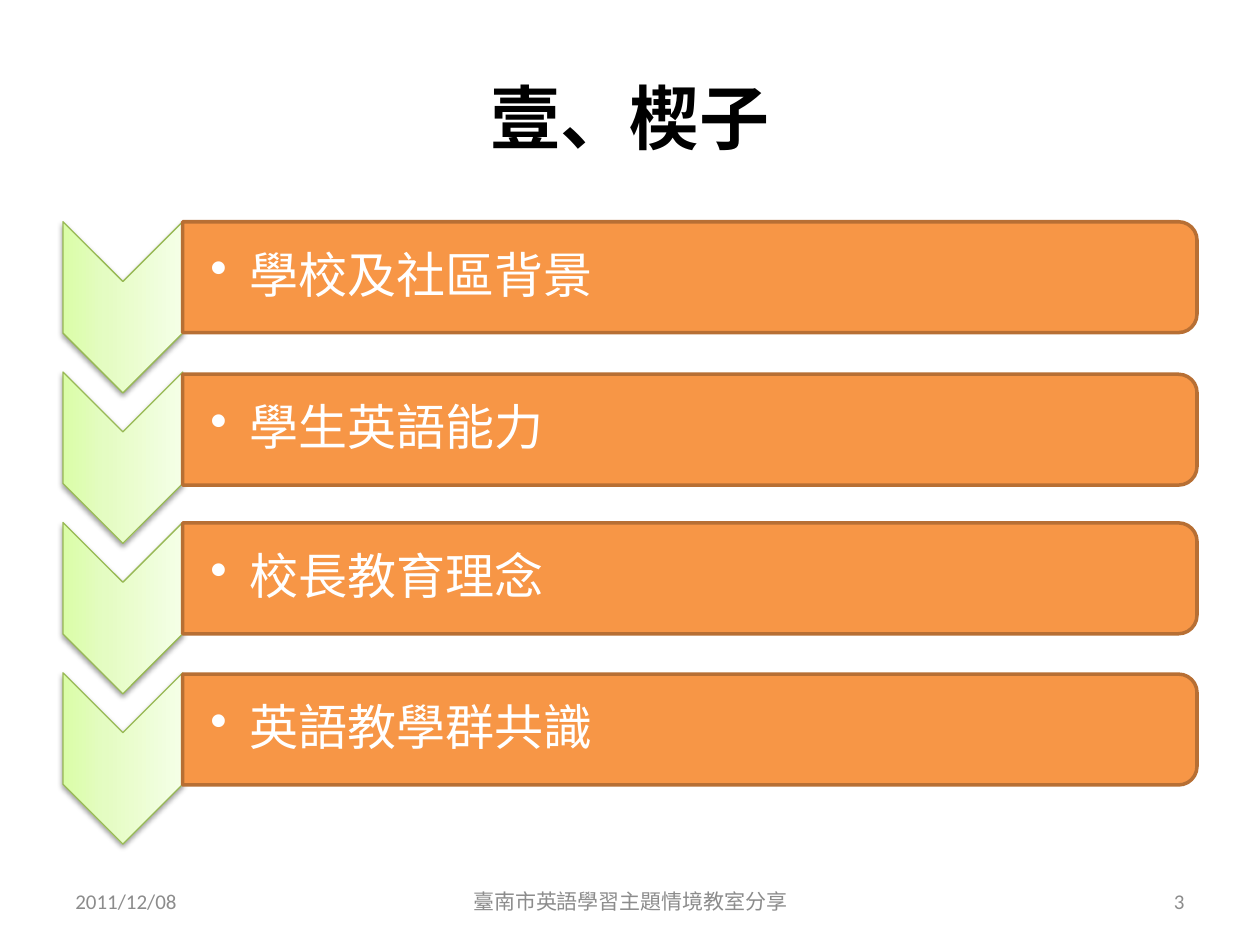
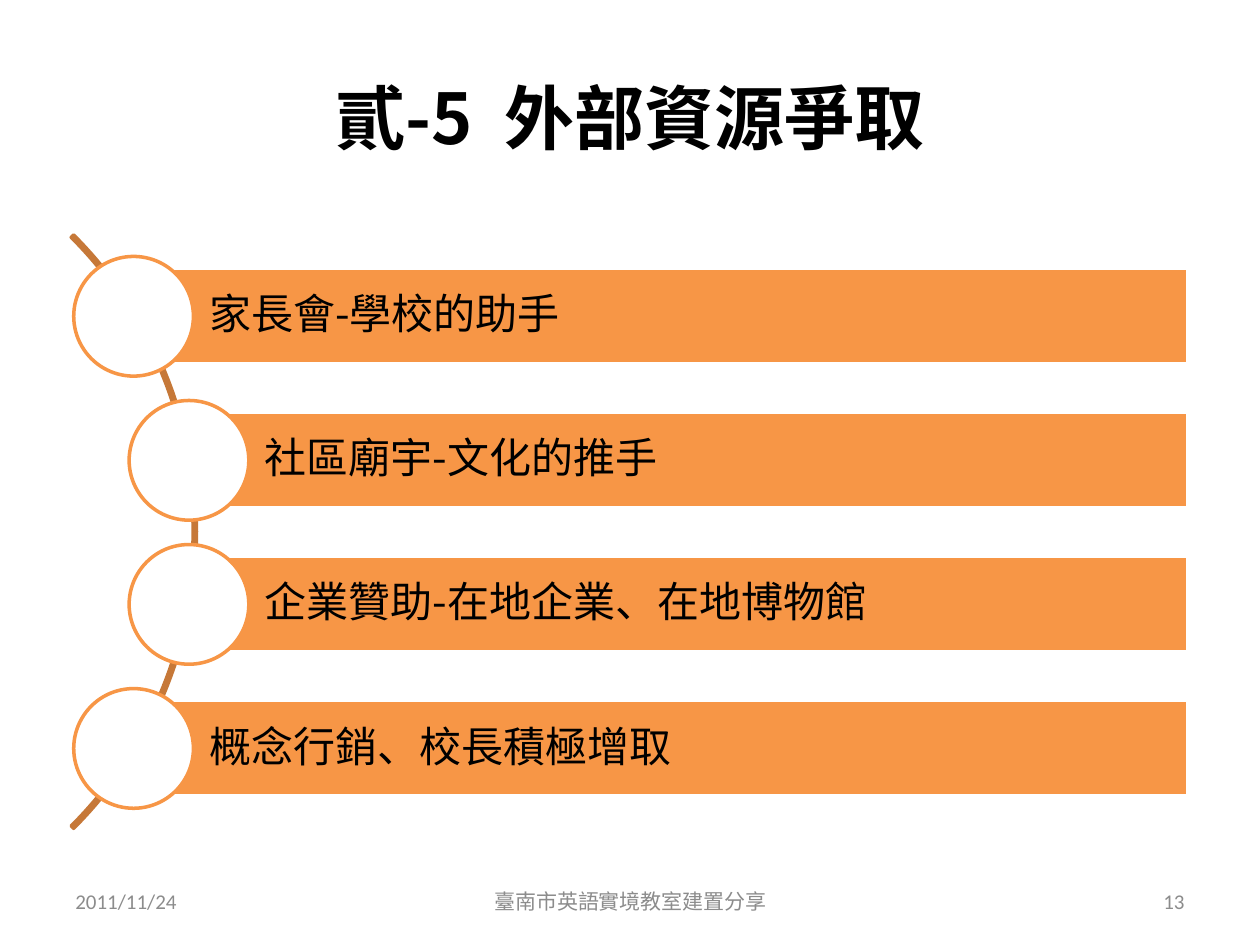
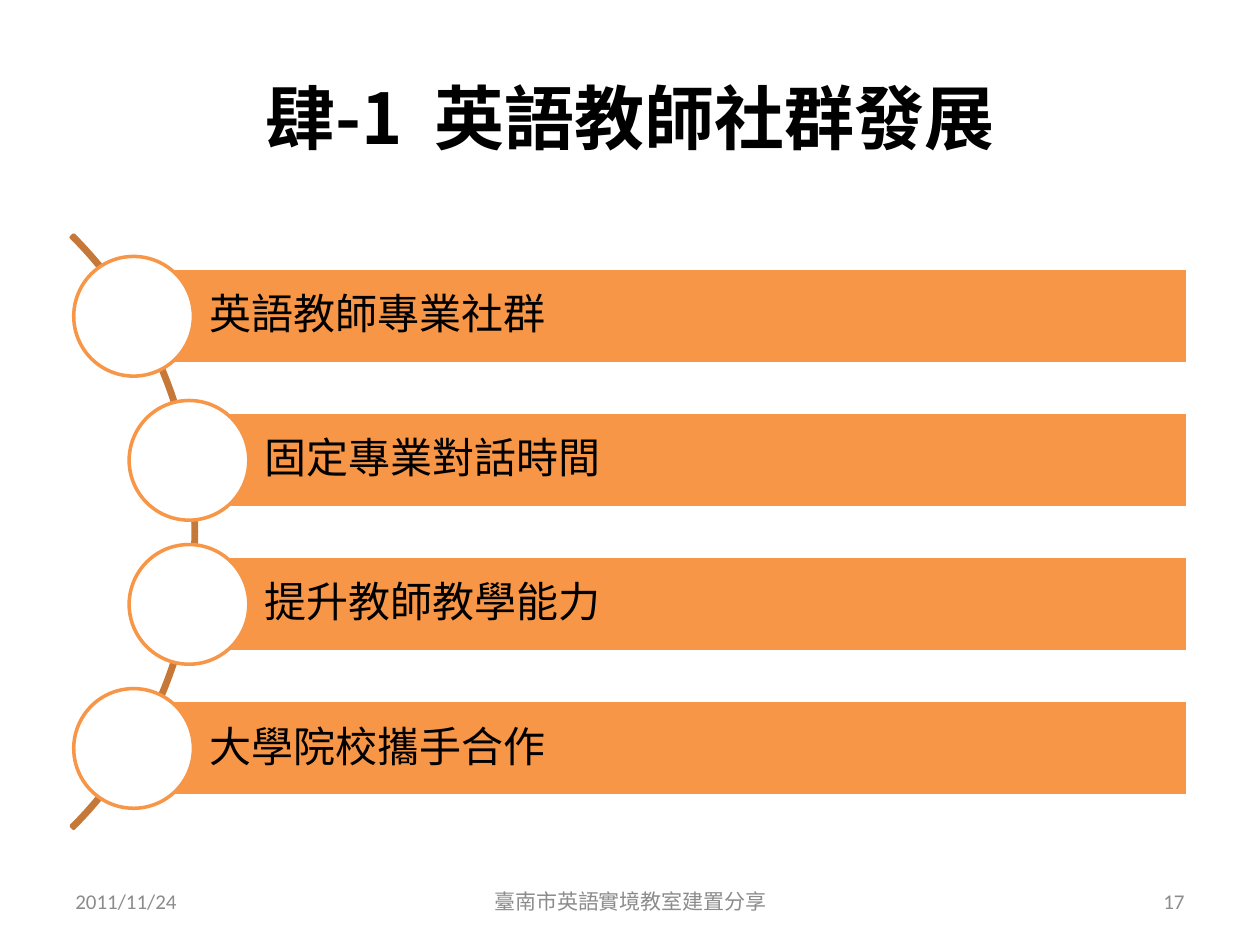
from dataclasses import dataclass
from lxml import etree
from pptx import Presentation
from pptx.dml.color import RGBColor
from pptx.enum.shapes import MSO_SHAPE
from pptx.enum.text import MSO_ANCHOR, PP_ALIGN
from pptx.oxml.ns import qn
from pptx.util import Inches, Pt

LEFT, MID, RIGHT = PP_ALIGN.LEFT, PP_ALIGN.CENTER, PP_ALIGN.RIGHT
CENTER = MSO_ANCHOR.MIDDLE
RECT, OVAL, ARC = MSO_SHAPE.RECTANGLE, MSO_SHAPE.OVAL, MSO_SHAPE.BLOCK_ARC
CHEVRON, TAB = MSO_SHAPE.CHEVRON, MSO_SHAPE.ROUND_2_SAME_RECTANGLE
TITLE_ONLY = 5


@dataclass(frozen=True)
class Theme:
    font: str = "Noto Sans CJK SC"
    small: str = "Calibri"
    ink: str = "000000"
    paper: str = "FFFFFF"
    gray: str = "8C8C8C"
    fill: str = "F79646"
    edge: str = "B76F34"
    curve: str = "C67838"
    leaf: str = "98B955"
    fade: tuple = ((0, "DAFDA7"), (35, "E4FCC2"), (100, "F5FFE7"))
    title: int = 40
    step: int = 28
    item: int = 24
    foot: int = 12


@dataclass(frozen=True)
class Box:
    x: float
    y: float
    w: float
    h: float

    def emu(self) -> tuple:
        return tuple(Inches(v) for v in (self.x, self.y, self.w, self.h))

    def turn(self) -> "Box":
        """Frame that covers this box once turned by 90 degrees."""
        shift = (self.w - self.h) / 2
        return Box(self.x + shift, self.y - shift, self.h, self.w)


@dataclass(frozen=True)
class Step:
    text: str
    top: float


@dataclass(frozen=True)
class Foot:
    date: str
    name: str
    page: str


T = Theme()
TITLE = Box(0.5, 0.3, 9, 1.25)
FEET = ((Box(0.5, 6.95, 2.33, 0.4), LEFT),
        (Box(3.42, 6.95, 3.17, 0.4), MID),
        (Box(7.17, 6.95, 2.33, 0.4), RIGHT))


# Text
def add_run(para, text: str, size: int, color: str, font: str = T.font,
            bold: bool = False):
    run = para.add_run()
    run.text = text
    run.font.size = Pt(size)
    run.font.bold = bold
    run.font.color.rgb = RGBColor.from_string(color)
    run.font.name = font
    etree.SubElement(run.font._element, qn("a:ea"), typeface=font)
    return run


def set_frame(shape, pads: tuple = (0.1, 0.05, 0.1, 0.05), align=LEFT):
    frame = shape.text_frame
    frame.word_wrap = True
    frame.vertical_anchor = CENTER
    (frame.margin_left, frame.margin_top, frame.margin_right,
     frame.margin_bottom) = (Inches(p) for p in pads)
    para = frame.paragraphs[0]
    para.alignment = align
    return para


def add_bullet(para, indent: float) -> None:
    props = para._p.get_or_add_pPr()
    props.set("marL", str(Inches(indent)))
    props.set("indent", str(-Inches(indent)))
    etree.SubElement(props, qn("a:buChar"), char="•")


# Shapes
def add_form(slide, kind, box: Box, fill: str | None, line: str,
             width: float = 2):
    shape = slide.shapes.add_shape(kind, *box.emu())
    shape.shadow.inherit = False
    if fill:
        shape.fill.solid()
        shape.fill.fore_color.rgb = RGBColor.from_string(fill)
    else:
        shape.fill.background()
    shape.line.color.rgb = RGBColor.from_string(line)
    shape.line.width = Pt(width)
    return shape


def add_color(parent, color: str):
    return etree.SubElement(parent, qn("a:srgbClr"), val=color)


def add_chevron(slide, box: Box) -> None:
    shape = add_form(slide, CHEVRON, box.turn(), None, T.leaf, 0.75)
    shape.rotation = 90
    shape.fill.gradient()
    shape.fill.gradient_angle = 90
    props = shape._element.spPr
    stops = props.find(".//" + qn("a:gsLst"))
    stops.clear()
    for pos, color in T.fade:
        add_color(etree.SubElement(stops, qn("a:gs"), pos=str(pos * 1000)), color)
    shade = etree.SubElement(
        props.find(qn("a:effectLst")), qn("a:outerShdw"),
        blurRad=str(Pt(3.1)), dist=str(Pt(1.6)), dir="5400000", rotWithShape="0")
    etree.SubElement(add_color(shade, T.ink), qn("a:alpha"), val="38000")


# Title and footer shared by every slide
def add_page(deck, words: tuple, foot: Foot):
    slide = deck.slides.add_slide(deck.slide_layouts[TITLE_ONLY])
    title = slide.shapes.title
    title.left, title.top, title.width, title.height = TITLE.emu()
    para = set_frame(title, align=MID)
    for i, word in enumerate(words):
        if i:
            gap = add_run(para, " ", T.title, T.ink, bold=True)
            gap.font._element.set("spc", "900")
        add_run(para, word, T.title, T.ink, bold=True)
    for (box, align), text in zip(FEET, (foot.date, foot.name, foot.page)):
        label = slide.shapes.add_textbox(*box.emu())
        add_run(set_frame(label, align=align), text, T.foot, T.gray, T.small)
    return slide


# Column of chevrons with a tab beside each
def draw_steps(slide, steps: tuple) -> None:
    first, last = 1.76, 5.34
    pitch = (last - first) / (len(steps) - 1)
    for i, step in enumerate(steps):
        add_chevron(slide, Box(0.5, first + i * pitch, 0.95, 1.36))
        box = Box(1.45, step.top, 8.05, 0.88)
        add_form(slide, TAB, box.turn(), T.fill, T.edge).rotation = 90
        label = slide.shapes.add_textbox(
            *Box(box.x, box.y + 0.04, 8.01, 0.8).emu())
        para = set_frame(label, (0.22, 0.02, 0.02, 0.02))
        para.line_spacing = 0.9
        add_bullet(para, 0.31)
        add_run(para, step.text, T.step, T.paper)


# Bars and discs strung along an arc
def draw_curve(slide, items: tuple) -> None:
    arc = add_form(slide, ARC, Box(-5.1, 0.89, 6.66, 6.66), None, T.curve)
    for i, value in enumerate((189, 27, 0.004)):
        arc.adjustments[i] = value
    first, last, high, disc, edge = 2.13, 5.56, 0.76, 0.95, 9.43
    pitch = (last - first) / (len(items) - 1)
    for i, text in enumerate(items):
        left = 1.06 if i in (0, len(items) - 1) else 1.5
        top = first + i * pitch
        bar = add_form(slide, RECT, Box(left, top, edge - left, high),
                       T.fill, T.paper)
        para = set_frame(bar, (0.6, 0.07, 0.07, 0.07))
        para.line_spacing = 0.9
        add_run(para, text, T.item, T.ink)
        add_form(slide, OVAL, Box(left - disc / 2, top + (high - disc) / 2,
                                  disc, disc), T.paper, T.fill)


STEPS = (Step("學校及社區背景", 1.76), Step("學生英語能力", 2.97),
         Step("校長教育理念", 4.15), Step("英語教學群共識", 5.35))
AIDS = ("家長會-學校的助手", "社區廟宇-文化的推手",
        "企業贊助-在地企業、在地博物館", "概念行銷、校長積極增取")
GROUP = ("英語教師專業社群", "固定專業對話時間",
         "提升教師教學能力", "大學院校攜手合作")
DAY, EVENT = "2011/11/24", "臺南市英語實境教室建置分享"


def main() -> None:
    deck = Presentation()
    deck.slide_width, deck.slide_height = Inches(10), Inches(7.5)
    intro = Foot("2011/12/08", "臺南市英語學習主題情境教室分享", "3")
    draw_steps(add_page(deck, ("壹、楔子",), intro), STEPS)
    draw_curve(add_page(deck, ("貳-5", "外部資源爭取"),
                        Foot(DAY, EVENT, "13")), AIDS)
    draw_curve(add_page(deck, ("肆-1", "英語教師社群發展"),
                        Foot(DAY, EVENT, "17")), GROUP)
    deck.save("out.pptx")


if __name__ == "__main__":
    main()
